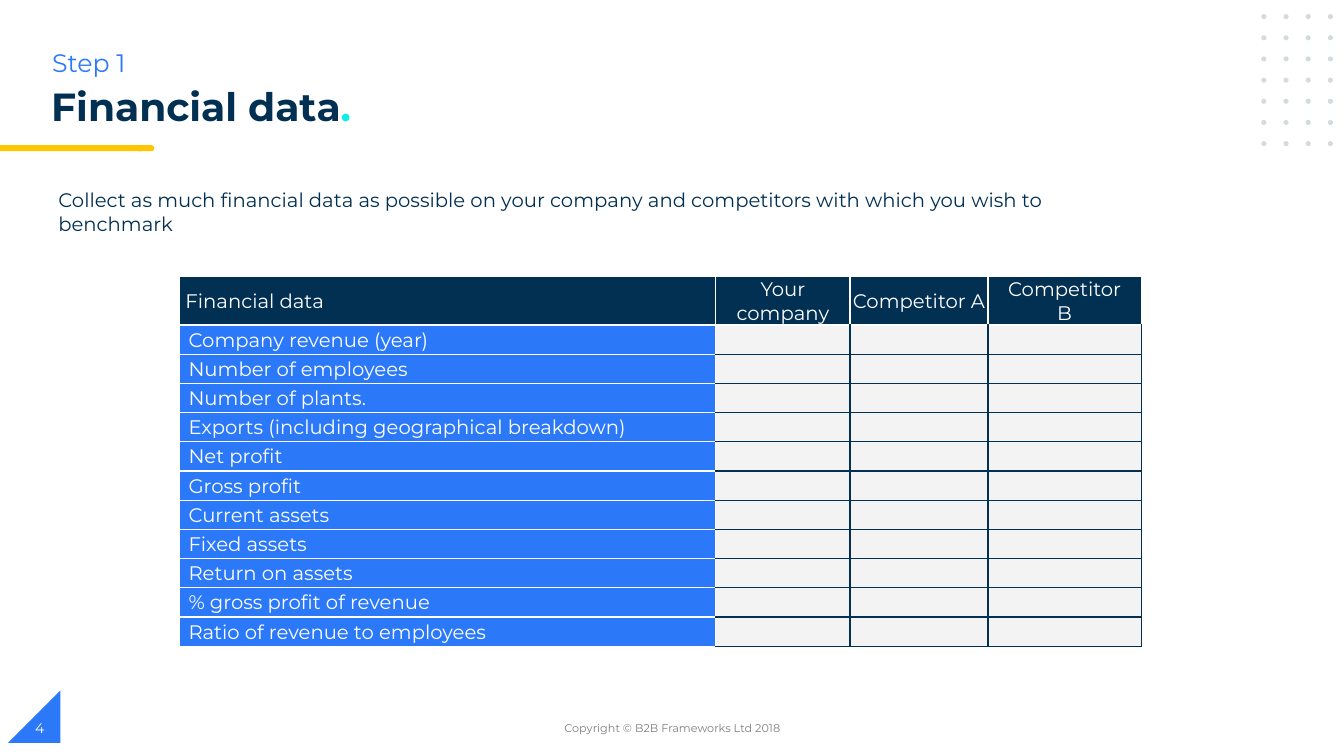
from lxml.etree import SubElement
from pptx import Presentation
from pptx.dml.color import RGBColor
from pptx.enum.shapes import MSO_SHAPE as Shape
from pptx.enum.text import MSO_ANCHOR as Anchor, PP_ALIGN as Align
from pptx.oxml.ns import qn
from pptx.util import Inches, Pt

NAVY = RGBColor(0x02, 0x30, 0x53)
BLUE = RGBColor(0x2B, 0x79, 0xF8)
AQUA = RGBColor(0x0E, 0xEC, 0xEC)
GOLD = RGBColor(0xFF, 0xC6, 0x00)
MIST = RGBColor(0xD1, 0xDB, 0xE0)
PALE = RGBColor(0xF3, 0xF3, 0xF3)
GRAY = RGBColor(0x7F, 0x7F, 0x7F)
WHITE = RGBColor(0xFF, 0xFF, 0xFF)

HEADS = ["Financial data", "Your company", "Competitor A", "Competitor\nB"]
WIDTHS = [5.32, 1.33, 1.37, 1.52]
ITEMS = [
    "Company revenue (year)",
    "Number of employees",
    "Number of plants.",
    "Exports (including geographical breakdown)",
    "Net profit",
    "Gross profit",
    "Current assets",
    "Fixed assets",
    "Return on assets",
    "% gross profit of revenue",
    "Ratio of revenue to employees",
]


class Page:
    """The current slide and its style."""

    font = "Montserrat"
    size = 14

    def __init__(self, slide):
        self.slide = slide

    def style(self, run, size, color, bold=False):
        run.font.name = self.font
        run.font.size = Pt(size)
        run.font.bold = bold
        run.font.color.rgb = color

    def shape(self, kind, left, top, width, height, color):
        shape = self.slide.shapes.add_shape(
            kind, Inches(left), Inches(top), Inches(width), Inches(height))
        shape.shadow.inherit = False
        shape.fill.solid()
        shape.fill.fore_color.rgb = color
        shape.line.fill.background()
        return shape

    def text(self, words, left, top, width, height, size, color,
             bold=False, align=Align.LEFT, anchor=Anchor.TOP):
        box = self.slide.shapes.add_textbox(
            Inches(left), Inches(top), Inches(width), Inches(height))
        frame = box.text_frame
        frame.word_wrap = True
        frame.vertical_anchor = anchor
        frame.text = words
        para = frame.paragraphs[0]
        para.alignment = align
        self.style(para.runs[0], size, color, bold)
        return para

    def edges(self, cell, colors):
        """Draw the left, right, top and bottom borders of a cell."""
        props = cell._tc.get_or_add_tcPr()
        for side, color in zip("LRTB", colors):
            line = SubElement(props, qn("a:ln" + side), w=str(Pt(1)))
            fill = SubElement(line, qn("a:solidFill"))
            SubElement(fill, qn("a:srgbClr"), val=str(color))

    def cell(self, cell, words, fill, colors, align, indent):
        self.edges(cell, colors)
        cell.fill.solid()
        cell.fill.fore_color.rgb = fill
        cell.vertical_anchor = Anchor.MIDDLE
        cell.margin_left = Inches(indent)
        cell.margin_right = cell.margin_top = Inches(0.01)
        cell.margin_bottom = 0
        cell.text_frame.text = words
        for para in cell.text_frame.paragraphs:
            para.alignment = align
            for run in para.runs:
                self.style(run, self.size, WHITE)
            if not para.runs:
                # An empty cell keeps the row low only with a set size
                SubElement(para._p, qn("a:endParaRPr"), sz=str(self.size * 100))

    def table(self, left, top, heads, items, widths, first, rest):
        high = first + rest * len(items)
        table = self.slide.shapes.add_table(
            len(items) + 1, len(heads), Inches(left), Inches(top),
            Inches(sum(widths)), Inches(high)).table
        table.first_row = table.horz_banding = False
        for col, width in zip(table.columns, widths):
            col.width = Inches(width)
        for row in table.rows:
            row.height = Inches(rest)
        table.rows[0].height = Inches(first)

        # Header row
        for c, head in enumerate(heads):
            align = Align.CENTER if c else Align.LEFT
            self.cell(table.cell(0, c), head, NAVY, [WHITE] * 4,
                      align, 0.01 if c else 0.06)

        # Item names and the empty cells beside them
        for r, item in enumerate(items, 1):
            self.cell(table.cell(r, 0), item, BLUE, [WHITE] * 4,
                      Align.LEFT, 0.09)
            for c in range(1, len(heads)):
                colors = [WHITE if c == 1 else NAVY, NAVY,
                          WHITE if r == 1 else NAVY, NAVY]
                self.cell(table.cell(r, c), "", PALE, colors,
                          Align.LEFT, 0.01)


def main():
    deck = Presentation()
    deck.slide_width, deck.slide_height = Inches(13.33), Inches(7.5)
    page = Page(deck.slides.add_slide(deck.slide_layouts[6]))

    # Corner triangle and title bar
    corner = page.shape(Shape.RIGHT_TRIANGLE, 0.08, 6.85, 0.52, 0.52, BLUE)
    corner._element.spPr.get_or_add_xfrm().set("flipH", "1")
    page.shape(Shape.FLOWCHART_TERMINATOR, 1.34, 1.44, 0.19, 0.06, GOLD)
    page.shape(Shape.RECTANGLE, 0, 1.44, 1.41, 0.06, GOLD)

    # Dot grid
    for row in range(7):
        for col in range(4):
            page.shape(Shape.OVAL, 12.51 + 0.22 * col, 0.14 + 0.21 * row,
                       0.05, 0.05, MIST)

    # Financial table
    page.table(1.78, 2.74, HEADS, ITEMS, WIDTHS, 0.48, 0.29)

    # Headings and lead text
    page.text("Collect as much financial data as possible on your company and "
              "competitors with which you wish to benchmark",
              0.48, 1.82, 10.93, 0.64, 14, NAVY)
    title = page.text("Financial data", 0.41, 0.82, 5.64, 0.56, 28, NAVY, True)
    title.line_spacing = 0.9
    dot = title.add_run()
    dot.text = "."
    page.style(dot, 28, AQUA, True)
    page.text("Step 1", 0.42, 0.42, 1.06, 0.4, 18, BLUE)

    # Footer
    page.text("Copyright © B2B Frameworks Ltd 2018", 4.42, 7.02, 4.5, 0.4,
              8, GRAY, align=Align.CENTER, anchor=Anchor.MIDDLE)
    page.text("4", 0.25, 7.02, 3, 0.4, 10, WHITE, anchor=Anchor.MIDDLE)

    deck.save("out.pptx")


if __name__ == "__main__":
    main()
